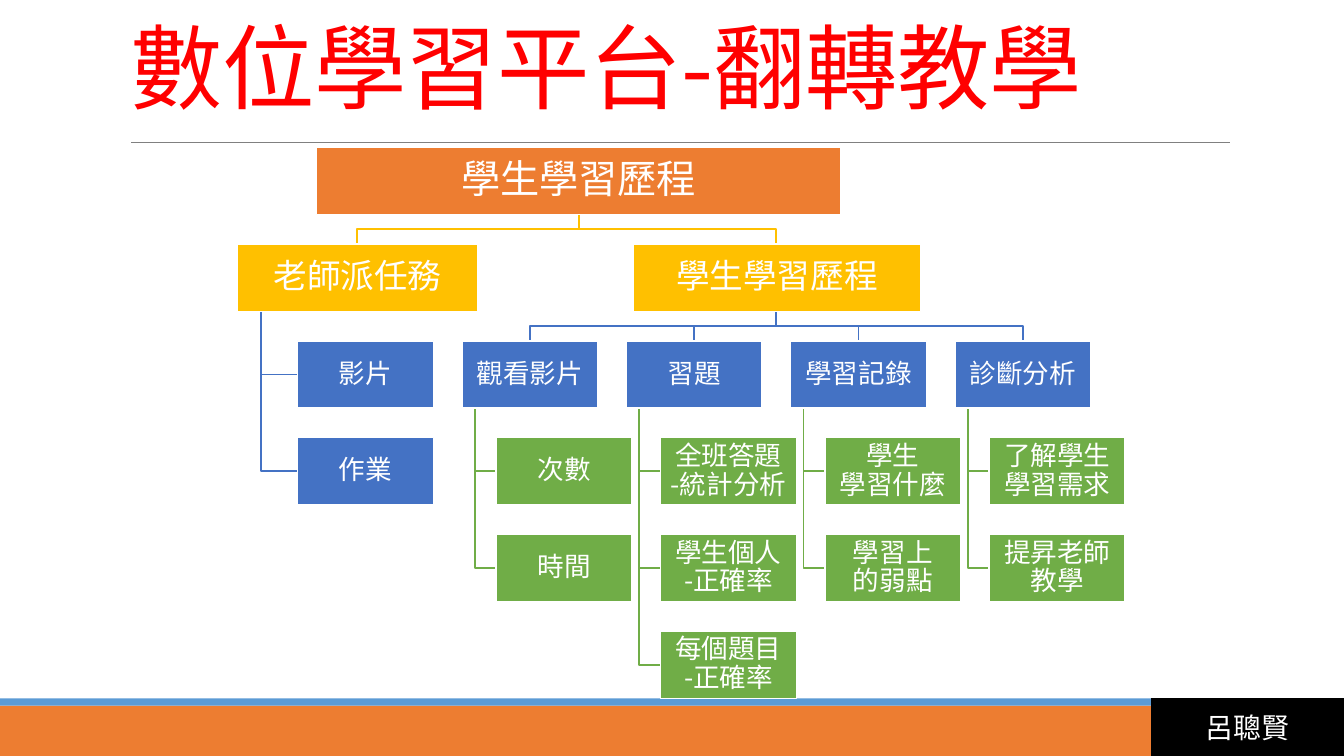
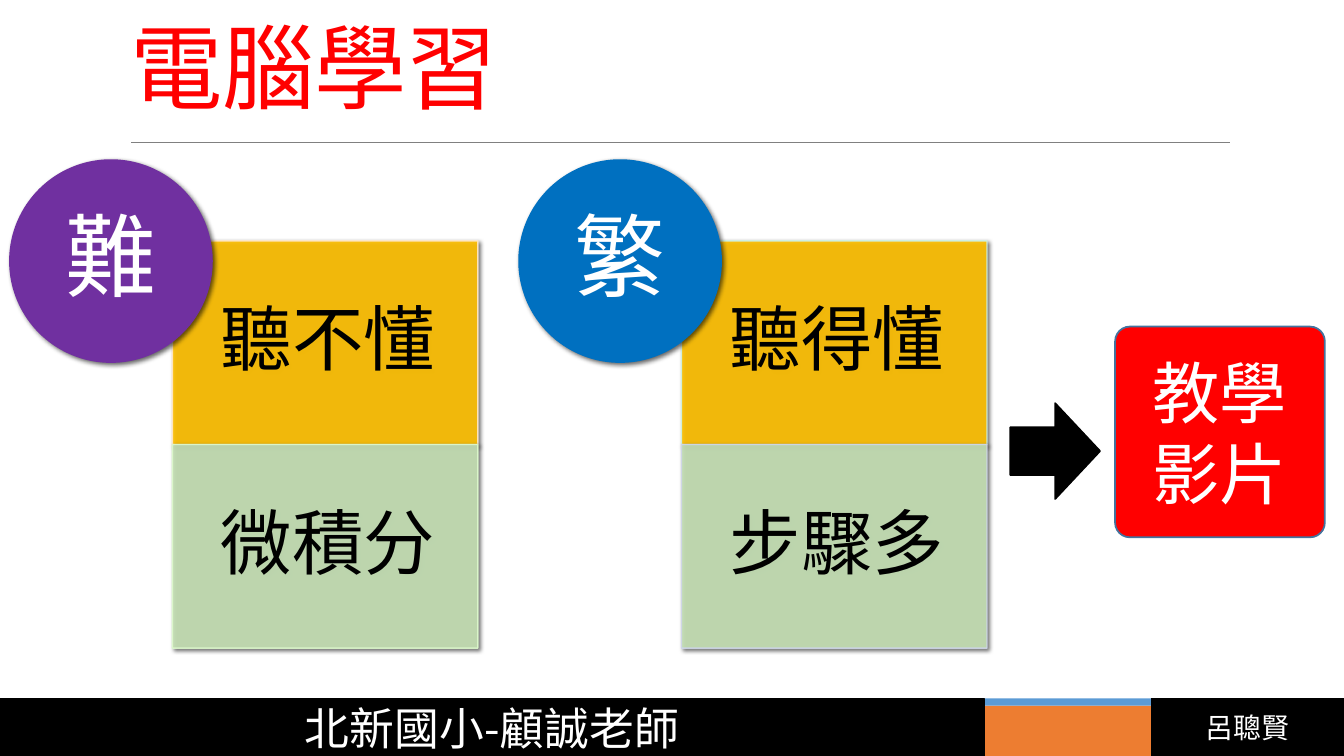
from pptx import Presentation
from pptx.dml.color import RGBColor
from pptx.enum.shapes import MSO_CONNECTOR, MSO_SHAPE as Shape
from pptx.enum.text import MSO_ANCHOR as Anchor, PP_ALIGN as Align
from pptx.oxml.ns import qn
from pptx.oxml.xmlchemy import OxmlElement
from pptx.util import Inches, Pt

FONT = "Noto Sans CJK SC"
WHITE = RGBColor(0xFF, 0xFF, 0xFF)
BLACK = RGBColor(0, 0, 0)
GREY = RGBColor(0x80, 0x80, 0x80)
RED = RGBColor(0xFF, 0, 0)
ORANGE = RGBColor(0xED, 0x7D, 0x31)
SKY = RGBColor(0x5B, 0x9B, 0xD5)
GOLD = RGBColor(0xFF, 0xC0, 0)
BLUE = RGBColor(0x44, 0x72, 0xC4)
GREEN = RGBColor(0x70, 0xAD, 0x47)
PALE_GREEN = RGBColor(0xC5, 0xE0, 0xB4)
PURPLE = RGBColor(0x70, 0x30, 0xA0)
DEEP_BLUE = RGBColor(0, 0x70, 0xC0)
STEEL = RGBColor(0x43, 0x73, 0x9E)
CREAM = RGBColor(0xFF, 0xE8, 0xCC)
LIME = RGBColor(0xDD, 0xF9, 0xCC)
MINT = RGBColor(0xCD, 0xF2, 0xE7)
LAVENDER = RGBColor(0xCF, 0xD6, 0xEA)


def add_box(slide, text, left, top, width, height, kind=Shape.RECTANGLE, fill=None,
            line=None, line_width=1.25, opacity=None, shadow_blur=None, size=20,
            color=WHITE, align=Align.CENTER, anchor=Anchor.MIDDLE, spacing=None,
            tracking=None, insets=(0.1, 0.05, 0.1, 0.05)):
    """Add a shape, or a text box when kind is None; insets run left, top, right, bottom."""
    area = [Inches(value) for value in (left, top, width, height)]
    if kind is None:
        shape = slide.shapes.add_textbox(*area)
    else:
        shape = slide.shapes.add_shape(kind, *area)
        shape.shadow.inherit = False
        shape.fill.solid()
        shape.fill.fore_color.rgb = fill
        if line is None:
            shape.line.fill.background()
        else:
            shape.line.color.rgb = line
            shape.line.width = Pt(line_width)
    properties = shape._element.spPr
    if opacity:
        for color_element in properties.iter(qn("a:srgbClr")):
            alpha = OxmlElement("a:alpha")
            alpha.set("val", str(opacity * 1000))
            color_element.append(alpha)
    if shadow_blur:
        shadow = OxmlElement("a:outerShdw")
        for name, value in (("blurRad", Pt(shadow_blur)), ("dist", Pt(2)),
                            ("dir", 45 * 60000), ("rotWithShape", 0)):
            shadow.set(name, str(int(value)))
        shadow_color = OxmlElement("a:srgbClr")
        shadow_color.set("val", str(BLACK))
        alpha = OxmlElement("a:alpha")
        alpha.set("val", "60000")
        shadow_color.append(alpha)
        shadow.append(shadow_color)
        properties.find(qn("a:effectLst")).append(shadow)
    if text:
        frame = shape.text_frame
        frame.word_wrap = True
        frame.vertical_anchor = anchor
        (frame.margin_left, frame.margin_top,
         frame.margin_right, frame.margin_bottom) = [Inches(value) for value in insets]
        paragraph = frame.paragraphs[0]
        paragraph.text = text
        paragraph.alignment = align
        paragraph.line_spacing = spacing
        for run in paragraph.runs:
            run.font.size = Pt(size)
            run.font.color.rgb = color
            run.font.name = FONT
            run_properties = run._r.get_or_add_rPr()
            east_asian = OxmlElement("a:ea")
            east_asian.set("typeface", FONT)
            run_properties.find(qn("a:latin")).addnext(east_asian)
            if tracking:
                run_properties.set("spc", str(int(tracking * 100)))
    return shape


def add_branch(slide, color, *points):
    """Draw an open line through points given in inches."""
    (start_x, start_y), *others = [(Inches(x), Inches(y)) for x, y in points]
    builder = slide.shapes.build_freeform(start_x, start_y)
    builder.add_line_segments(others, close=False)
    branch = builder.convert_to_shape()
    branch.shadow.inherit = False
    branch.fill.background()
    branch.line.color.rgb = color
    branch.line.width = Pt(1.25)


presentation = Presentation()
presentation.slide_width = Inches(13.33)
presentation.slide_height = Inches(7.5)

# Shared frame: bands, title rule, name tag and title
for title in ("數位學習平台-翻轉教學", "電腦學習"):
    slide = presentation.slides.add_slide(presentation.slide_layouts[6])
    add_box(slide, "", 0, 7, 13.33, 0.5, fill=ORANGE)
    add_box(slide, "", 0, 6.93, 13.33, 0.07, fill=SKY)
    rule = slide.shapes.add_connector(MSO_CONNECTOR.STRAIGHT, Inches(1.3), Inches(1.41),
                                      Inches(12.2), Inches(1.41))
    rule.line.color.rgb = GREY
    rule.line.width = Pt(0.5)
    rule._element.spPr.append(OxmlElement("a:effectLst"))
    add_box(slide, "呂聰賢", 11.42, 6.93, 1.91, 0.58, fill=BLACK, line=BLACK)
    add_box(slide, title, 1.2, 0.31, 11, 0.94, kind=None, size=66, color=RED,
            align=Align.LEFT, anchor=Anchor.BOTTOM, spacing=0.85, tracking=-0.5)

tree_slide, reasons_slide = presentation.slides

# Slide 1: tree of learning records
NODE_WIDTH, NODE_HEIGHT = 1.35, 0.67
COLUMN_STEP, CHILD_INDENT, STEM_INDENT = 1.63, 0.34, 0.13
ROOT_CENTER, TEACHER_CENTER, STUDENT_CENTER = 5.74, 3.54, 7.7
TEACHER_STEM, TASK_LEFT = 2.59, 2.95
row_tops = [1.46 + 0.96 * row for row in range(6)]
row_ends = [top + NODE_HEIGHT for top in row_tops]
tasks = ("影片", "作業")
topics = (
    ("觀看影片", ("次數", "時間")),
    ("習題", ("全班答題\n-統計分析", "學生個人\n-正確率", "每個題目\n-正確率")),
    ("學習記錄", ("學生\n學習什麼", "學習上\n的弱點")),
    ("診斷分析", ("了解學生\n學習需求", "提昇老師\n教學")),
)

# Each node: text, left, row, width, fill, text size
nodes = [
    ("學生學習歷程", 3.14, 0, 5.2, ORANGE, 28),
    ("老師派任務", 2.35, 1, 2.39, GOLD, 24),
    ("學生學習歷程", 6.28, 1, 2.85, GOLD, 24),
]
forks = [(GOLD, ROOT_CENTER, center, 0) for center in (TEACHER_CENTER, STUDENT_CENTER)]
elbows = []
for row, task in enumerate(tasks, start=2):
    nodes.append((task, TASK_LEFT, row, NODE_WIDTH, BLUE, 19))
    elbows.append((BLUE, TEACHER_STEM, TASK_LEFT, 1, row))
for column, (topic, details) in enumerate(topics, start=1):
    left = TASK_LEFT + COLUMN_STEP * column
    nodes.append((topic, left, 2, NODE_WIDTH, BLUE, 19))
    forks.append((BLUE, STUDENT_CENTER, left + NODE_WIDTH / 2, 1))
    for row, detail in enumerate(details, start=3):
        nodes.append((detail, left + CHILD_INDENT, row, NODE_WIDTH, GREEN, 19))
        elbows.append((GREEN, left + STEM_INDENT, left + CHILD_INDENT, 2, row))

for color, stem, child_left, parent_row, row in elbows:
    middle = row_tops[row] + NODE_HEIGHT / 2
    add_branch(tree_slide, color, (stem, row_ends[parent_row]), (stem, middle),
               (child_left, middle))
for color, parent_center, child_center, row in forks:
    start, end = row_ends[row], row_tops[row + 1]
    middle = (start + end) / 2
    add_branch(tree_slide, color, (parent_center, start), (parent_center, middle),
               (child_center, middle), (child_center, end))
for text, left, row, width, fill, size in nodes:
    add_box(tree_slide, text, left, row_tops[row], width, NODE_HEIGHT, fill=fill,
            line=WHITE, size=size, spacing=0.9, insets=(0.01, 0.01, 0.01, 0.01))

# Slide 2: two difficulties leading to teaching videos
CARD_WIDTH, CARD_HEIGHT, DISC_SIZE = 3.03, 2.02, 2.02
difficulties = (
    ("難", PURPLE, (("聽不懂", GOLD, CREAM), ("微積分", PALE_GREEN, LIME))),
    ("繁", DEEP_BLUE, (("聽得懂", GOLD, MINT), ("步驟多", PALE_GREEN, LAVENDER))),
)
for column, (word, disc_fill, cards) in enumerate(difficulties):
    disc_left = 0.09 + 5.05 * column
    for row, (text, fill, line) in enumerate(cards):
        add_box(reasons_slide, text, disc_left + 1.62, 2.39 + CARD_HEIGHT * row,
                CARD_WIDTH, CARD_HEIGHT, fill=fill, line=line, line_width=1, opacity=90,
                shadow_blur=3, size=51, color=BLACK, align=Align.LEFT, spacing=0.9,
                insets=(0.48, 0.4, 0.4, 0.4))
    add_box(reasons_slide, word, disc_left, 1.58, DISC_SIZE, DISC_SIZE, kind=Shape.OVAL,
            fill=disc_fill, shadow_blur=3.5, size=65, spacing=0.9, insets=(0, 0, 0, 0))

add_box(reasons_slide, "", 10.02, 4, 0.89, 0.95, kind=Shape.RIGHT_ARROW,
        fill=BLACK, line=BLACK)
video = add_box(reasons_slide, "教學\n影片", 11.06, 3.24, 2.08, 2.09,
                kind=Shape.ROUNDED_RECTANGLE, fill=RED, line=STEEL, size=48)
video.adjustments[0] = 0.07
add_box(reasons_slide, "北新國小-顧誠老師", 0, 6.93, 9.76, 0.57, fill=BLACK, line=BLACK, size=32)

presentation.save("out.pptx")
